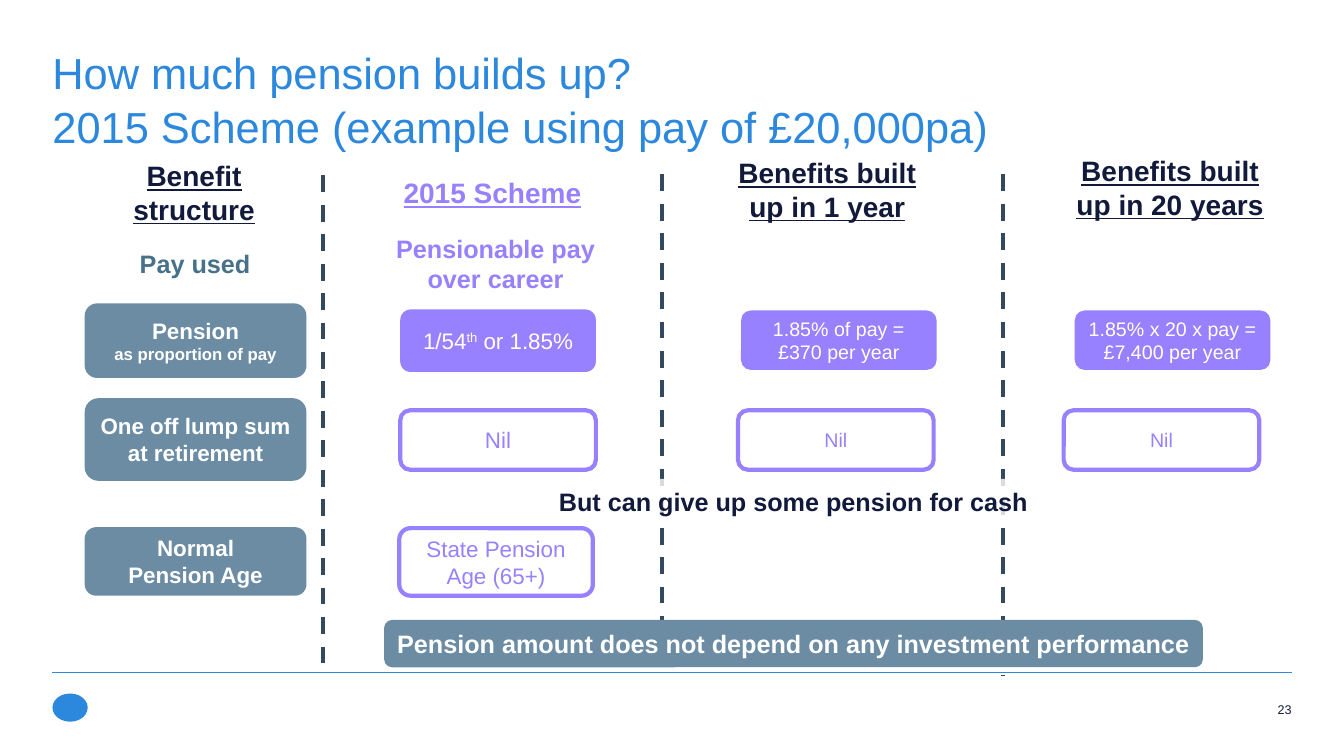
import pptx
import pptx.util
import pptx.dml.color
import pptx.enum.dml
import pptx.enum.shapes
import pptx.enum.text
import pptx.oxml.ns
import lxml.etree

Inches, Pt = pptx.util.Inches, pptx.util.Pt
ALIGN, ANCHOR = pptx.enum.text.PP_ALIGN, pptx.enum.text.MSO_ANCHOR
SHAPE = pptx.enum.shapes.MSO_SHAPE
NAVY, BLUE, SLATE, PURPLE, WHITE = "121A3C", "2C88DD", "6B8CA3", "9881FF", "FFFFFF"


def rgb(hex_color):
    return pptx.dml.color.RGBColor.from_string(hex_color)


def write(sp, text, size, color, align=ALIGN.CENTER, bold=False, underline=False):
    """Fill a shape with text, one paragraph per line, and format every run."""
    tf = sp.text_frame
    tf.word_wrap = True
    tf.text = text
    for p in tf.paragraphs:
        p.alignment = align
        for r in p.runs:
            r.font.name, r.font.size = "Arial", Pt(size)
            r.font.bold, r.font.underline = bold, underline
            r.font.color.rgb = rgb(color)


prs = pptx.Presentation()
prs.slide_width, prs.slide_height = Inches(13.33), Inches(7.5)
s = prs.slides.add_slide(prs.slide_layouts[5])

# Title and page number
title = s.shapes.title
title.left, title.top, title.width, title.height = map(Inches, (0.52, 0.41, 12.28, 1.13))
write(title, "How much pension builds up?\v2015 Scheme (example using pay of £20,000pa)",
      31, BLUE, ALIGN.LEFT)
title.text_frame.paragraphs[0].line_spacing = 1.04
page = s.shapes.add_textbox(Inches(11.93), Inches(6.96), Inches(0.88), Inches(0.24))
write(page, "23", 9, NAVY, ALIGN.RIGHT)
for sp, anchor in ((title, ANCHOR.MIDDLE), (page, ANCHOR.TOP)):
    tf = sp.text_frame
    tf.margin_left = tf.margin_right = tf.margin_top = tf.margin_bottom = 0
    tf.vertical_anchor = anchor
    tf.auto_size = pptx.enum.text.MSO_AUTO_SIZE.NONE

# Footer mark
mark = s.shapes.add_shape(SHAPE.OVAL, Inches(0.52), Inches(6.88), Inches(0.35), Inches(0.28))
mark.shadow.inherit = False
mark.fill.solid()
mark.fill.fore_color.rgb = rgb(BLUE)
mark.line.fill.background()

# Footer rule and column dividers: x1, y1, x2, y2, colour, width, dashed
rules = [
    (0.52, 6.67, 12.81, 6.67, BLUE, 0.75, False),
    (3.2, 1.74, 3.2, 6.66, "33495E", 3, True),
    (6.57, 1.73, 6.57, 6.66, "33495E", 3, True),
    (9.95, 1.73, 9.95, 6.7, "33495E", 3, True),
]
for x1, y1, x2, y2, color, width, dashed in rules:
    line = s.shapes.add_connector(pptx.enum.shapes.MSO_CONNECTOR.STRAIGHT,
                                  Inches(x1), Inches(y1), Inches(x2), Inches(y2))
    line.line.color.rgb = rgb(color)
    line.line.width = Pt(width)
    if dashed:
        line.line.dash_style = pptx.enum.dml.MSO_LINE.DASH
    lxml.etree.SubElement(line.element.spPr, pptx.oxml.ns.qn("a:effectLst"))

# Boxes by style: fill, outline, text colour, bold, underline
styles = {
    "heading": (None, None, NAVY, True, True),
    "scheme heading": (None, None, PURPLE, True, True),
    "row label": (None, None, "467188", True, False),
    "scheme label": (None, None, PURPLE, True, False),
    "row": (SLATE, None, WHITE, True, False),
    "value": (PURPLE, None, WHITE, False, False),
    "outlined": (None, PURPLE, PURPLE, False, False),
    "note": (WHITE, None, NAVY, True, False),
}
boxes = [
    ("heading", 0.9, 1.54, 2.05, 0.74, 20, "Benefit structure"),
    ("scheme heading", 3.86, 1.54, 2.05, 0.74, 20, "2015 Scheme"),
    ("heading", 7.18, 1.51, 2.05, 0.74, 20, "Benefits built up in 1 year"),
    ("heading", 10.5, 1.49, 2.21, 0.74, 20, "Benefits built up in 20 years"),
    ("row label", 1.05, 2.24, 1.77, 0.74, 18, "Pay used"),
    ("scheme label", 3.59, 2.24, 2.65, 0.74, 18, "Pensionable pay over career"),
    ("row", 0.84, 3.01, 2.2, 0.74, 16, "Pension\nas proportion of pay"),
    ("value", 3.97, 3.07, 1.94, 0.62, 16, "1/54th or 1.85%"),
    ("value", 7.35, 3.08, 1.94, 0.59, 14, "1.85% of pay = £370 per year"),
    ("value", 10.66, 3.08, 1.94, 0.59, 14, "1.85% x 20 x pay = £7,400 per year"),
    ("row", 0.84, 3.95, 2.2, 0.82, 16, "One off lump sum at retirement"),
    ("outlined", 3.97, 4.07, 1.94, 0.59, 16, "Nil"),
    ("outlined", 7.32, 4.07, 1.94, 0.59, 14, "Nil"),
    ("outlined", 10.55, 4.07, 1.94, 0.59, 14, "Nil"),
    ("row", 0.84, 5.23, 2.2, 0.68, 16, "Normal\nPension Age"),
    ("outlined", 3.96, 5.24, 1.92, 0.67, 16, "State Pension Age (65+)"),
    ("row", 3.81, 6.15, 8.12, 0.47, 18,
     "Pension amount does not depend on any investment performance"),
    ("note", 4.74, 4.75, 6.26, 0.45, 18, "But can give up some pension for cash"),
]
for style, x, y, w, h, size, text in boxes:
    fill, outline, color, bold, underline = styles[style]
    sp = s.shapes.add_shape(SHAPE.ROUNDED_RECTANGLE, Inches(x), Inches(y), Inches(w), Inches(h))
    sp.shadow.inherit = False
    if fill:
        sp.fill.solid()
        sp.fill.fore_color.rgb = rgb(fill)
    else:
        sp.fill.background()
    if outline:
        sp.line.color.rgb = rgb(outline)
        sp.line.width = Pt(3)
    else:
        sp.line.fill.background()
    sp.text_frame.vertical_anchor = ANCHOR.MIDDLE
    write(sp, text, size, color, bold=bold, underline=underline)

    if style == "note":
        tint = sp.element.spPr.find(".//" + pptx.oxml.ns.qn("a:srgbClr"))
        lxml.etree.SubElement(tint, pptx.oxml.ns.qn("a:alpha"), val="81000")
    elif text.startswith("Pension\n"):
        sp.text_frame.paragraphs[1].runs[0].font.size = Pt(12)
    elif text.startswith("1/54th"):
        p = sp.text_frame.paragraphs[0]
        p.runs[0].text = "1/54"
        for part in ("th", " or 1.85%"):
            r = p.add_run()
            r.text = part
            r.font.name, r.font.size = "Arial", Pt(size)
            r.font.color.rgb = rgb(color)
        p.runs[1].font._element.set("baseline", "30000")

prs.save("out.pptx")
